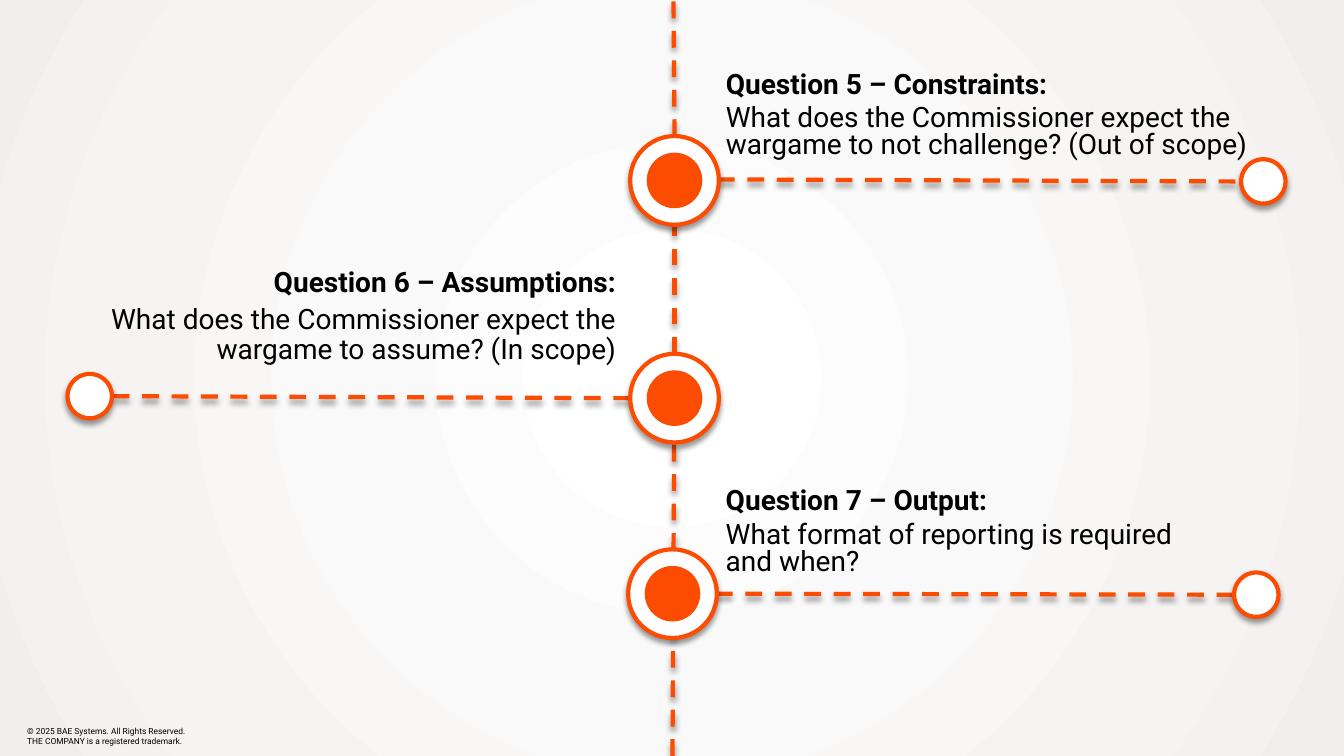
from pptx import Presentation
from pptx.dml.color import RGBColor
from pptx.enum.dml import MSO_LINE_DASH_STYLE as DASH
from pptx.enum.shapes import MSO_CONNECTOR, MSO_SHAPE
from pptx.enum.text import MSO_ANCHOR, MSO_AUTO_SIZE, PP_ALIGN
from pptx.oxml import parse_xml
from pptx.oxml.ns import nsdecls, qn
from pptx.util import Inches, Pt

COLORS = {"orange": "FC4C02", "white": "FFFFFF", "black": "000000"}
BACKDROP = [(8, "FFFFFF"), (42, "FAF9F9"), (72, "F6F4F3"), (100, "F2EEED")]
FONT = "Roboto"
DISC, CORE, KNOB = 0.88, 0.51, 0.44


def outline(shape, shadow=True):
    shape.line.color.rgb = RGBColor.from_string(COLORS["orange"])
    shape.line.width = Pt(3)
    effect = (
        f'<a:outerShdw blurRad="{Pt(4)}" dist="{Pt(3)}" dir="5400000" algn="t" rotWithShape="0">'
        f'<a:srgbClr val="{COLORS["black"]}"><a:alpha val="40000"/></a:srgbClr></a:outerShdw>'
    )
    shape._element.spPr.append(
        parse_xml(f'<a:effectLst {nsdecls("a")}>{effect if shadow else ""}</a:effectLst>')
    )


def add_text(paragraph, text, size, bold=False):
    run = paragraph.add_run()
    run.text = text
    run.font.name = FONT
    run.font.size = Pt(size)
    run.font.bold = bold
    run.font.color.rgb = RGBColor.from_string(COLORS["black"])


presentation = Presentation()
presentation.slide_width = Inches(13.33)
presentation.slide_height = Inches(7.5)
slide = presentation.slides.add_slide(presentation.slide_layouts[6])

slide.background.fill.gradient()
gradient = slide.element.find(".//" + qn("a:gradFill"))
for child in list(gradient):
    gradient.remove(child)
stops = "".join(
    f'<a:gs pos="{position * 1000}"><a:srgbClr val="{color}"/></a:gs>'
    for position, color in BACKDROP
)
gradient.append(parse_xml(f'<a:gsLst {nsdecls("a")}>{stops}</a:gsLst>'))
gradient.append(parse_xml(
    f'<a:path {nsdecls("a")} path="circle">'
    '<a:fillToRect l="50000" t="50000" r="50000" b="50000"/></a:path>'
))

footer = slide.shapes.add_textbox(Inches(0.27), Inches(7.14), Inches(1.79), Inches(0.32))
frame = footer.text_frame
frame.word_wrap = True
frame.vertical_anchor = MSO_ANCHOR.MIDDLE
frame.margin_left = frame.margin_right = frame.margin_top = frame.margin_bottom = 0
add_text(frame.paragraphs[0], "© 2025 BAE Systems. All Rights Reserved.", 6)
add_text(frame.add_paragraph(), "THE COMPANY is a registered trademark.", 6)

timeline = [(6.67, 7.5, 6.69, 3.69), (6.69, 3.51, 6.69, 1.58), (6.69, 1.35, 6.68, 0)]
branches = [(7.12, 1.78, 12.31, 1.8), (6.25, 3.95, 1.12, 3.93), (7.1, 5.89, 12.24, 5.9)]
for ends in timeline + branches:
    line = slide.shapes.add_connector(MSO_CONNECTOR.STRAIGHT, *map(Inches, ends))
    line.line.dash_style = DASH.DASH
    outline(line)

questions = [
    ("Question 5 – Constraints:",
     "What does the Commissioner expect the wargame to not challenge? (Out of scope)",
     (7.1, 0.67, 5.55, 0.99), PP_ALIGN.LEFT, 0.8, (6.69, 1.79), (12.53, 1.8)),
    ("Question 6 – Assumptions:",
     "What does the Commissioner expect the wargame to assume? (In scope)",
     (0.66, 2.64, 5.55, 1.05), PP_ALIGN.RIGHT, 0.9, (6.69, 3.95), (0.89, 3.93)),
    ("Question 7 – Output:",
     "What format of reporting is required and when?",
     (7.1, 4.8, 4.7, 0.99), PP_ALIGN.LEFT, 0.8, (6.67, 5.89), (12.46, 5.9)),
]
for title, body, box, alignment, body_spacing, hub, tip in questions:
    circles = [(hub, DISC, "white"), (hub, CORE, "orange"), (tip, KNOB, "white")]
    for (x, y), size, color in circles:
        circle = slide.shapes.add_shape(
            MSO_SHAPE.OVAL, Inches(x - size / 2), Inches(y - size / 2), Inches(size), Inches(size)
        )
        circle.fill.solid()
        circle.fill.fore_color.rgb = RGBColor.from_string(COLORS[color])
        outline(circle, shadow=size != CORE)

    textbox = slide.shapes.add_textbox(*map(Inches, box))
    frame = textbox.text_frame
    frame.word_wrap = True
    frame.auto_size = MSO_AUTO_SIZE.SHAPE_TO_FIT_TEXT
    heading, detail = frame.paragraphs[0], frame.add_paragraph()
    add_text(heading, title, 20, bold=True)
    add_text(detail, body, 20)
    for paragraph, spacing in ((heading, 0.8), (detail, body_spacing)):
        paragraph.alignment = alignment
        paragraph.line_spacing = spacing
        paragraph.space_after = Pt(5)

presentation.save("out.pptx")
